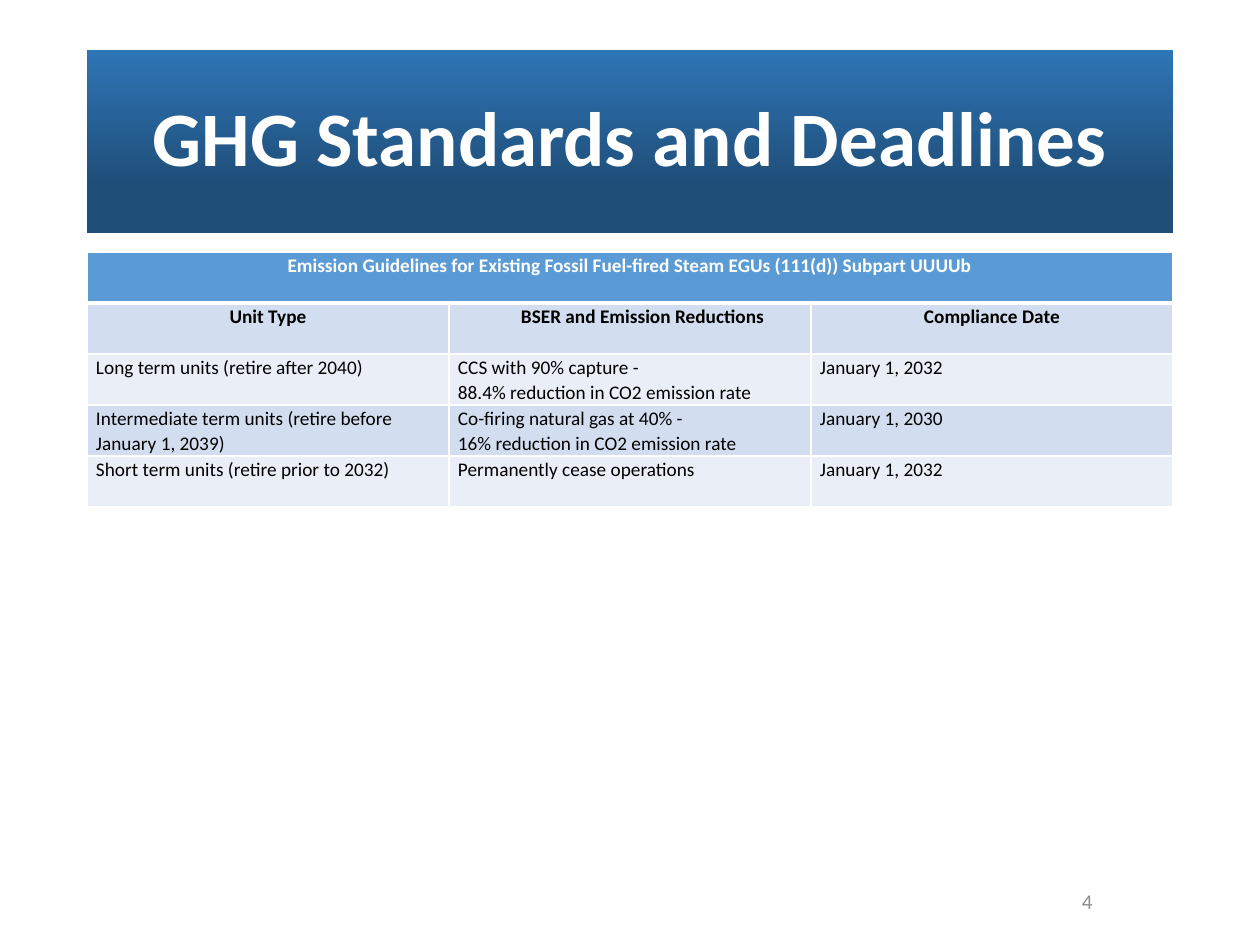
"""Build the slide on greenhouse gas standards and compliance deadlines."""
from lxml import etree
from pptx import Presentation
from pptx.dml.color import RGBColor
from pptx.enum.shapes import MSO_SHAPE
from pptx.enum.text import MSO_ANCHOR, PP_ALIGN
from pptx.oxml.ns import qn
from pptx.util import Emu, Pt

CENTER, LEFT, RIGHT = PP_ALIGN.CENTER, PP_ALIGN.LEFT, PP_ALIGN.RIGHT
MIDDLE = MSO_ANCHOR.MIDDLE
RECTANGLE = MSO_SHAPE.RECTANGLE

TITLE = "GHG Standards and Deadlines"
PAGE = "4"
ROWS = [
    ["Emission Guidelines for Existing Fossil Fuel-fired Steam EGUs (111(d)) Subpart UUUUb"],
    ["Unit Type", "BSER and Emission Reductions", "Compliance Date"],
    ["Long term units (retire after 2040)",
     "CCS with 90% capture -\n88.4% reduction in CO2 emission rate", "January 1, 2032"],
    ["Intermediate term units (retire before January 1, 2039)",
     "Co-firing natural gas at 40% -\n16% reduction in CO2 emission rate", "January 1, 2030"],
    ["Short term units (retire prior to 2032)",
     "Permanently cease operations", "January 1, 2032"],
]
COLORS = {"white": "FFFFFF", "black": "000000", "header": "5B9BD5",
          "dark band": "D2DEEF", "light band": "EAEFF7",
          "title top": "2E75B6", "title bottom": "1F4E79", "page": "8C8C8C"}
FONT = "Calibri"
MARGIN, WIDTH = 87, 1086
TITLE_TOP, TITLE_HEIGHT = 50, 183
TABLE_TOP, ROW_HEIGHT, COLUMNS = 252, 51, 3
CELL_INSET, FIRST_INDENT = 9, 63


def px(length):
    return Emu(round(length * 914400 / 126))


def rgb(name):
    return RGBColor.from_string(COLORS[name])


def style(paragraph, size, color, align, bold=False, spacing=None):
    paragraph.alignment = align
    if spacing:
        paragraph.line_spacing = spacing
    font = paragraph.font
    font.name, font.size, font.bold = FONT, Pt(size), bold
    font.color.rgb = rgb(color)


def add_border(cell, side, points):
    line = etree.SubElement(cell._tc.get_or_add_tcPr(), qn(f"a:ln{side}"), w=str(Pt(points)))
    fill = etree.SubElement(line, qn("a:solidFill"))
    etree.SubElement(fill, qn("a:srgbClr"), val=COLORS["white"])


def add_title(slide):
    banner = slide.shapes.add_shape(RECTANGLE, px(MARGIN), px(TITLE_TOP), px(WIDTH), px(TITLE_HEIGHT))
    banner.shadow.inherit = False
    banner.line.fill.background()
    banner.fill.gradient()
    banner.fill.gradient_angle = 270
    for stop, position, color in zip(banner.fill.gradient_stops, (0, 0.74), ("title top", "title bottom")):
        stop.position, stop.color.rgb = position, rgb(color)
    frame = banner.text_frame
    frame.text, frame.vertical_anchor = TITLE, MIDDLE
    style(frame.paragraphs[0], 44, "white", CENTER, True, 0.9)


def fill_cell(cell, row, column, text):
    for side in "LRTB":
        thick = (row, side) in ((0, "B"), (1, "T"))
        add_border(cell, side, 3 if thick else 1)
    cell.fill.solid()
    band = "dark band" if row % 2 else "light band"
    cell.fill.fore_color.rgb = rgb("header" if row == 0 else band)
    cell.margin_left = cell.margin_right = px(CELL_INSET)
    cell.margin_top = cell.margin_bottom = 0
    cell.text = text
    indented = (row, column) == (1, 1)
    for paragraph in cell.text_frame.paragraphs:
        if indented:
            paragraph._p.get_or_add_pPr().set("indent", str(px(FIRST_INDENT)))
        style(paragraph, 11, "black" if row else "white",
              CENTER if row < 2 and not indented else LEFT, row < 2, 1.07)


def add_standards(slide):
    table = slide.shapes.add_table(len(ROWS), COLUMNS, px(MARGIN), px(TABLE_TOP),
                                   px(WIDTH), px(ROW_HEIGHT * len(ROWS))).table
    for column in table.columns:
        column.width = px(WIDTH // COLUMNS)
    table.cell(0, 0).merge(table.cell(0, COLUMNS - 1))
    for row, texts in enumerate(ROWS):
        table.rows[row].height = px(ROW_HEIGHT)
        for column in range(COLUMNS):
            text = texts[column] if column < len(texts) else ""
            fill_cell(table.cell(row, column), row, column, text)


def add_page_number(slide):
    frame = slide.shapes.add_textbox(px(822), px(876), px(283), px(50)).text_frame
    frame.word_wrap = True
    frame.text, frame.vertical_anchor = PAGE, MIDDLE
    style(frame.paragraphs[0], 12, "page", RIGHT)


def main():
    deck = Presentation()
    deck.slide_width, deck.slide_height = px(1260), px(945)
    slide = deck.slides.add_slide(deck.slide_layouts[6])
    add_title(slide)
    add_standards(slide)
    add_page_number(slide)
    deck.save("out.pptx")


if __name__ == "__main__":
    main()
